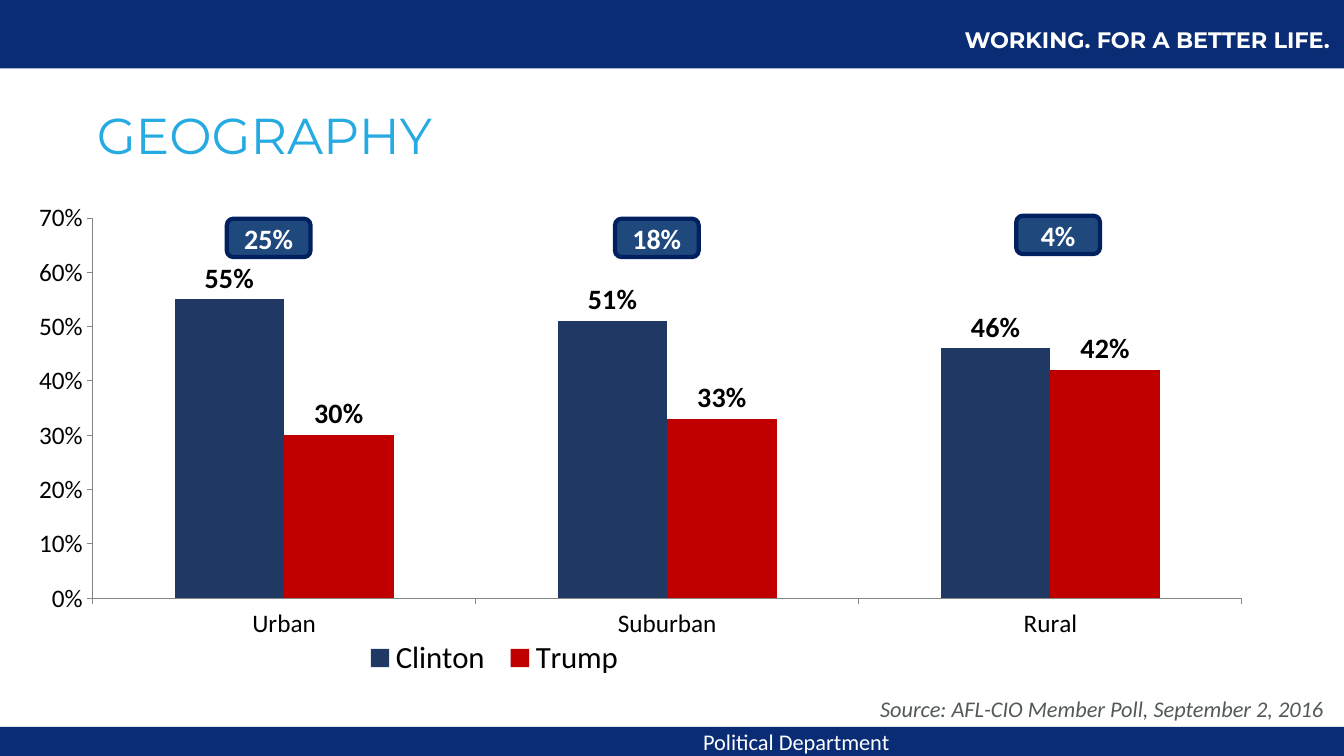
from dataclasses import dataclass

from lxml import etree
from pptx import Presentation
from pptx.chart.data import CategoryChartData
from pptx.dml.color import RGBColor
from pptx.enum.chart import XL_CHART_TYPE, XL_LABEL_POSITION, XL_LEGEND_POSITION, XL_TICK_MARK
from pptx.enum.shapes import MSO_SHAPE
from pptx.enum.text import MSO_ANCHOR, PP_ALIGN
from pptx.oxml.ns import qn
from pptx.util import Inches, Pt

RECT, ROUND = MSO_SHAPE.RECTANGLE, MSO_SHAPE.ROUNDED_RECTANGLE
LEFT, CENTER, RIGHT = PP_ALIGN.LEFT, PP_ALIGN.CENTER, PP_ALIGN.RIGHT
TOP, MIDDLE = MSO_ANCHOR.TOP, MSO_ANCHOR.MIDDLE
COLUMNS = XL_CHART_TYPE.COLUMN_CLUSTERED
OUTSIDE, TICK_OUT = XL_LABEL_POSITION.OUTSIDE_END, XL_TICK_MARK.OUTSIDE
BOTTOM, NO_TICK = XL_LEGEND_POSITION.BOTTOM, XL_TICK_MARK.NONE


@dataclass(frozen=True)
class Theme:
    band: str = "092C74"
    title: str = "25AAE1"
    badge: str = "1F497D"
    edge: str = "002060"
    source: str = "535959"
    axis: str = "868686"
    white: str = "FFFFFF"
    black: str = "000000"
    head: str = "Montserrat"
    body: str = "Calibri"
    title_size: int = 36
    legend_size: int = 22
    label_size: int = 20
    axis_size: int = 18
    note_size: int = 16


@dataclass(frozen=True)
class Box:
    left: float
    top: float
    width: float
    height: float

    def place(self) -> tuple:
        return tuple(Inches(v) for v in (self.left, self.top, self.width, self.height))


@dataclass(frozen=True)
class Note:
    text: str
    box: Box
    color: str
    font: str
    align: PP_ALIGN = LEFT
    anchor: MSO_ANCHOR = TOP
    bold: bool = False
    italic: bool = False


@dataclass(frozen=True)
class Badge:
    text: str
    left: float
    top: float


@dataclass(frozen=True)
class Series:
    name: str
    values: tuple
    color: str


THEME = Theme()
BANDS = (Box(0, 7.21, 13.33, 0.29), Box(0, 0, 13.33, 0.68))
NOTES = (
    Note("WORKING. FOR A BETTER LIFE.", Box(8.61, 0.21, 5.54, 0.37),
         THEME.white, THEME.head, CENTER, bold=True),
    Note("Political Department", Box(4.42, 7.28, 4.5, 0.15),
         THEME.white, THEME.body, RIGHT, MIDDLE),
    Note("Source: AFL-CIO Member Poll, September 2, 2016", Box(8.63, 6.85, 4.86, 0.37),
         THEME.source, THEME.body, italic=True),
)
BADGES = (Badge("25%", 2.25, 2.17), Badge("18%", 6.1, 2.17), Badge("4%", 10.08, 2.14))
PLACES = ("Urban", "Suburban", "Rural")
SERIES = (
    Series("Clinton", (0.55, 0.51, 0.46), "203864"),
    Series("Trump", (0.3, 0.33, 0.42), "C00000"),
)
PLOT = Box(0.073, 0.038, 0.907, 0.779)
LEGEND = Box(0.28, 0.9, 0.22, 0.09)


def rgb(color: str) -> RGBColor:
    return RGBColor.from_string(color)


def style(font, size: int, color: str, name: str = THEME.body,
          bold: bool = False, italic: bool = False) -> None:
    font.size, font.name, font.bold, font.italic = Pt(size), name, bold, italic
    font.color.rgb = rgb(color)


def add_band(slide, box: Box) -> None:
    band = slide.shapes.add_shape(RECT, *box.place())
    band.shadow.inherit = False
    band.fill.solid()
    band.fill.fore_color.rgb = rgb(THEME.band)
    band.line.fill.background()


def add_title(slide, text: str) -> None:
    title = slide.shapes.title
    title.left, title.top, title.width, title.height = Box(0.86, 0.89, 11.55, 0.96).place()
    frame = title.text_frame
    frame.text, frame.vertical_anchor = text, MIDDLE
    line = frame.paragraphs[0]
    line.alignment, line.line_spacing = LEFT, 0.9
    style(line.runs[0].font, THEME.title_size, THEME.title, THEME.head)


def add_note(slide, note: Note) -> None:
    frame = slide.shapes.add_textbox(*note.box.place()).text_frame
    frame.word_wrap, frame.vertical_anchor = True, note.anchor
    frame.text = note.text
    line = frame.paragraphs[0]
    line.alignment = note.align
    style(line.runs[0].font, THEME.note_size, note.color, note.font, note.bold, note.italic)


def add_badge(slide, badge: Badge) -> None:
    shape = slide.shapes.add_shape(ROUND, *Box(badge.left, badge.top, 0.83, 0.38).place())
    shape.shadow.inherit = False
    shape.fill.solid()
    shape.fill.fore_color.rgb = rgb(THEME.badge)
    shape.line.color.rgb, shape.line.width = rgb(THEME.edge), Pt(3)
    frame = shape.text_frame
    frame.text, frame.vertical_anchor = badge.text, MIDDLE
    line = frame.paragraphs[0]
    line.alignment = CENTER
    style(line.runs[0].font, THEME.label_size, THEME.white, bold=True)


def set_layout(part, box: Box, inner: bool = False) -> None:
    """Fix a chart part's place, in fractions of the chart."""
    layout = part.find(qn("c:layout"))
    if layout is None:
        layout = etree.Element(qn("c:layout"))
        if inner:
            part.insert(0, layout)
        else:
            part.find(qn("c:legendPos")).addnext(layout)
    manual = etree.SubElement(layout, qn("c:manualLayout"))
    marks = [("layoutTarget", "inner")] if inner else []
    marks += [("xMode", "edge"), ("yMode", "edge"), ("x", box.left), ("y", box.top),
              ("w", box.width), ("h", box.height)]
    for tag, value in marks:
        etree.SubElement(manual, qn(f"c:{tag}")).set("val", str(value))


def add_columns(slide) -> None:
    data = CategoryChartData(number_format="0%")
    data.categories = PLACES
    for item in SERIES:
        data.add_series(item.name, item.values)
    chart = slide.shapes.add_chart(COLUMNS, *Box(0, 1.98, 12.57, 4.84).place(), data).chart
    chart.has_title = False
    style(chart.font, THEME.axis_size, THEME.black)
    plot = chart.plots[0]
    plot.gap_width, plot.overlap, plot.vary_by_categories = 150, 0, False
    for item, bars in zip(SERIES, plot.series):
        bars.format.fill.solid()
        bars.format.fill.fore_color.rgb = rgb(item.color)
        labels = bars.data_labels
        labels.show_value, labels.position = True, OUTSIDE
        labels.number_format, labels.number_format_is_linked = "0%", False
        style(labels.font, THEME.label_size, THEME.black, bold=True)
    for axis in (chart.category_axis, chart.value_axis):
        axis.has_major_gridlines = False
        axis.major_tick_mark, axis.minor_tick_mark = TICK_OUT, NO_TICK
        axis.format.line.color.rgb = rgb(THEME.axis)
        style(axis.tick_labels.font, THEME.axis_size, THEME.black)
    scale = chart.value_axis
    scale.minimum_scale, scale.maximum_scale, scale.major_unit = 0, 0.7, 0.1
    scale.tick_labels.number_format = "0%"
    scale.tick_labels.number_format_is_linked = False
    chart.has_legend = True
    chart.legend.position, chart.legend.include_in_layout = BOTTOM, False
    style(chart.legend.font, THEME.legend_size, THEME.black)
    root = chart.element
    set_layout(root.find(".//" + qn("c:plotArea")), PLOT, inner=True)
    set_layout(root.find(".//" + qn("c:legend")), LEGEND)


def main() -> None:
    deck = Presentation()
    deck.slide_width, deck.slide_height = Inches(13.33), Inches(7.5)
    slide = deck.slides.add_slide(deck.slide_layouts[5])
    for band in BANDS:
        add_band(slide, band)
    add_title(slide, "GEOGRAPHY")
    add_columns(slide)
    for badge in BADGES:
        add_badge(slide, badge)
    for note in NOTES:
        add_note(slide, note)
    deck.save("out.pptx")


if __name__ == "__main__":
    main()
